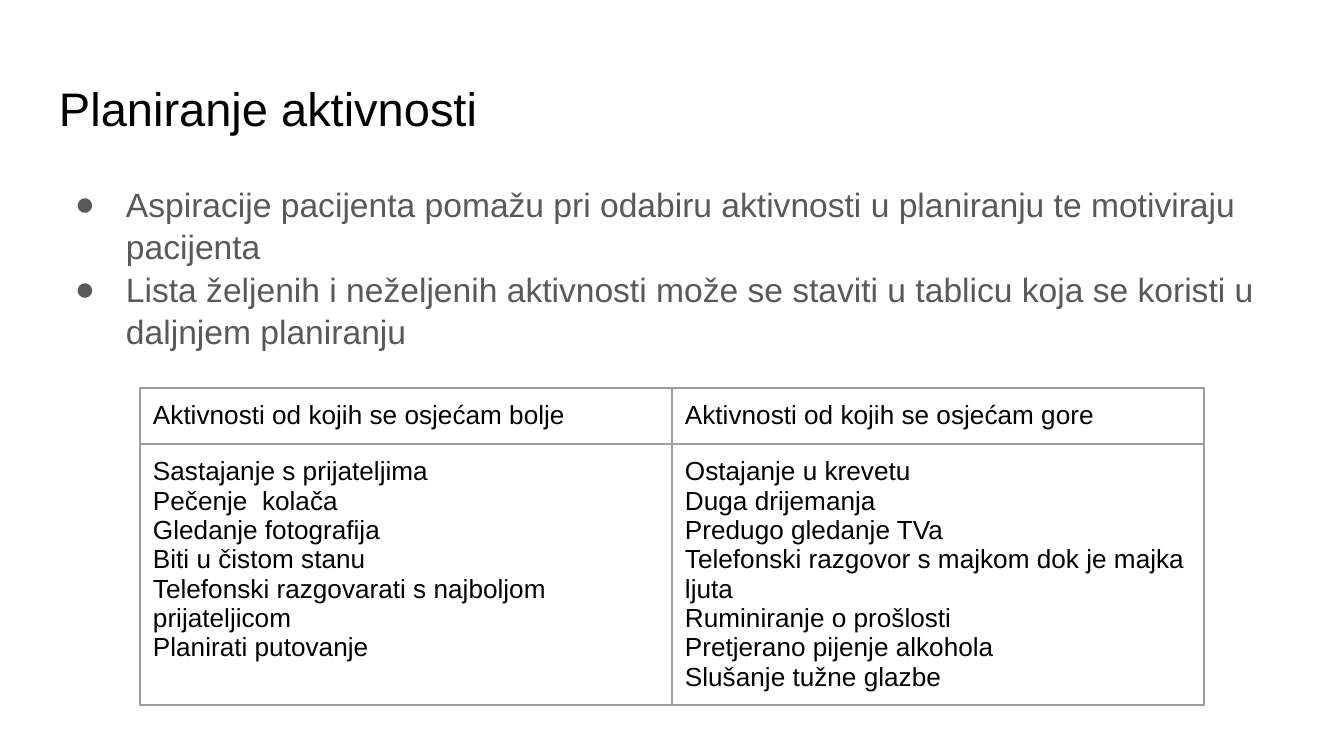
"""Build the activity planning slide with a list and a two-column table."""
from lxml.etree import SubElement
from pptx import Presentation
from pptx.dml.color import RGBColor
from pptx.enum.text import MSO_ANCHOR, MSO_AUTO_SIZE, PP_ALIGN
from pptx.oxml import parse_xml
from pptx.oxml.ns import nsdecls, qn
from pptx.util import Inches, Pt

PX = Inches(10) / 1344


def px(length):
    return round(length * PX)


def format_text(frame, size, color, spacing=1.0):
    for paragraph in frame.paragraphs:
        paragraph.alignment = PP_ALIGN.LEFT
        paragraph.line_spacing = spacing
        paragraph.space_before = paragraph.space_after = Pt(0)
        for run in paragraph.runs:
            run.font.size = Pt(size)
            run.font.name = "Arial"
            run.font.color.rgb = RGBColor.from_string(color)


presentation = Presentation()
presentation.slide_width = px(1344)
presentation.slide_height = px(756)
slide = presentation.slides.add_slide(presentation.slide_layouts[1])
heading, aspirations = slide.placeholders

heading.text_frame.text = "Planiranje aktivnosti"
aspirations.text_frame.text = "\n".join([
    "Aspiracije pacijenta pomažu pri odabiru aktivnosti u planiranju te motiviraju pacijenta",
    "Lista željenih i neželjenih aktivnosti može se staviti u tablicu koja se koristi u daljnjem planiranju",
])

for part, top, height, size, color, spacing in [
    (heading, 66, 85, 25.2, "000000", 1.0),
    (aspirations, 169, 195, 18, "595959", 1.05),
]:
    part.left, part.top, part.width, part.height = px(46), px(top), px(1252), px(height)
    frame = part.text_frame
    frame.word_wrap = True
    frame.auto_size = MSO_AUTO_SIZE.NONE
    frame.vertical_anchor = MSO_ANCHOR.TOP
    frame.margin_left = frame.margin_right = frame.margin_top = frame.margin_bottom = px(13)
    format_text(frame, size, color, spacing)

for paragraph in aspirations.text_frame.paragraphs:
    properties = paragraph._p.get_or_add_pPr()
    properties.set("marL", str(px(67)))
    properties.set("indent", str(-px(51)))
    bullet_color = SubElement(properties, qn("a:buClr"))
    SubElement(bullet_color, qn("a:srgbClr"), val="595959")
    SubElement(properties, qn("a:buFont"), typeface="Arial")
    SubElement(properties, qn("a:buChar"), char="●")

activities = {
    "Aktivnosti od kojih se osjećam bolje": [
        "Sastajanje s prijateljima",
        "Pečenje  kolača",
        "Gledanje fotografija",
        "Biti u čistom stanu",
        "Telefonski razgovarati s najboljom prijateljicom",
        "Planirati putovanje",
    ],
    "Aktivnosti od kojih se osjećam gore": [
        "Ostajanje u krevetu",
        "Duga drijemanja",
        "Predugo gledanje TVa",
        "Telefonski razgovor s majkom dok je majka ljuta",
        "Ruminiranje o prošlosti",
        "Pretjerano pijenje alkohola",
        "Slušanje tužne glazbe",
    ],
}
comparison = slide.shapes.add_table(2, 2, px(140), px(388), px(1064), px(317)).table
comparison.first_row = comparison.horz_banding = False
comparison.rows[0].height = px(56)
comparison.rows[1].height = px(261)

for column, (feeling, examples) in enumerate(activities.items()):
    comparison.cell(0, column).text_frame.text = feeling
    comparison.cell(1, column).text_frame.text = "\n".join(examples)

for cell in comparison.iter_cells():
    cell.margin_left = cell.margin_right = cell.margin_top = cell.margin_bottom = px(13)
    cell.vertical_anchor = MSO_ANCHOR.TOP
    cell.fill.background()
    format_text(cell.text_frame, 14, "000000")
    for position, side in enumerate(["lnL", "lnR", "lnT", "lnB"]):
        border = parse_xml(
            f'<a:{side} {nsdecls("a")} w="{Pt(0.75)}"><a:solidFill>'
            f'<a:srgbClr val="9E9E9E"/></a:solidFill></a:{side}>'
        )
        cell._tc.get_or_add_tcPr().insert(position, border)

presentation.save("out.pptx")
